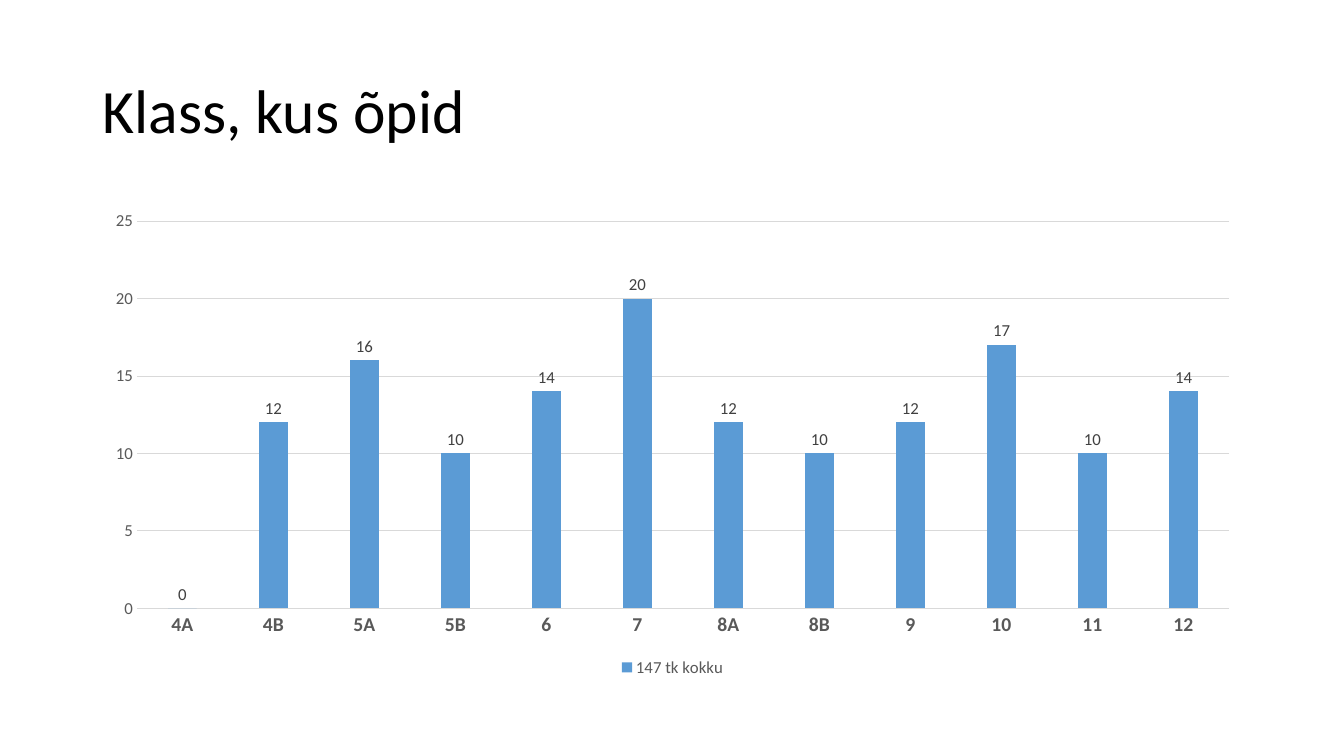
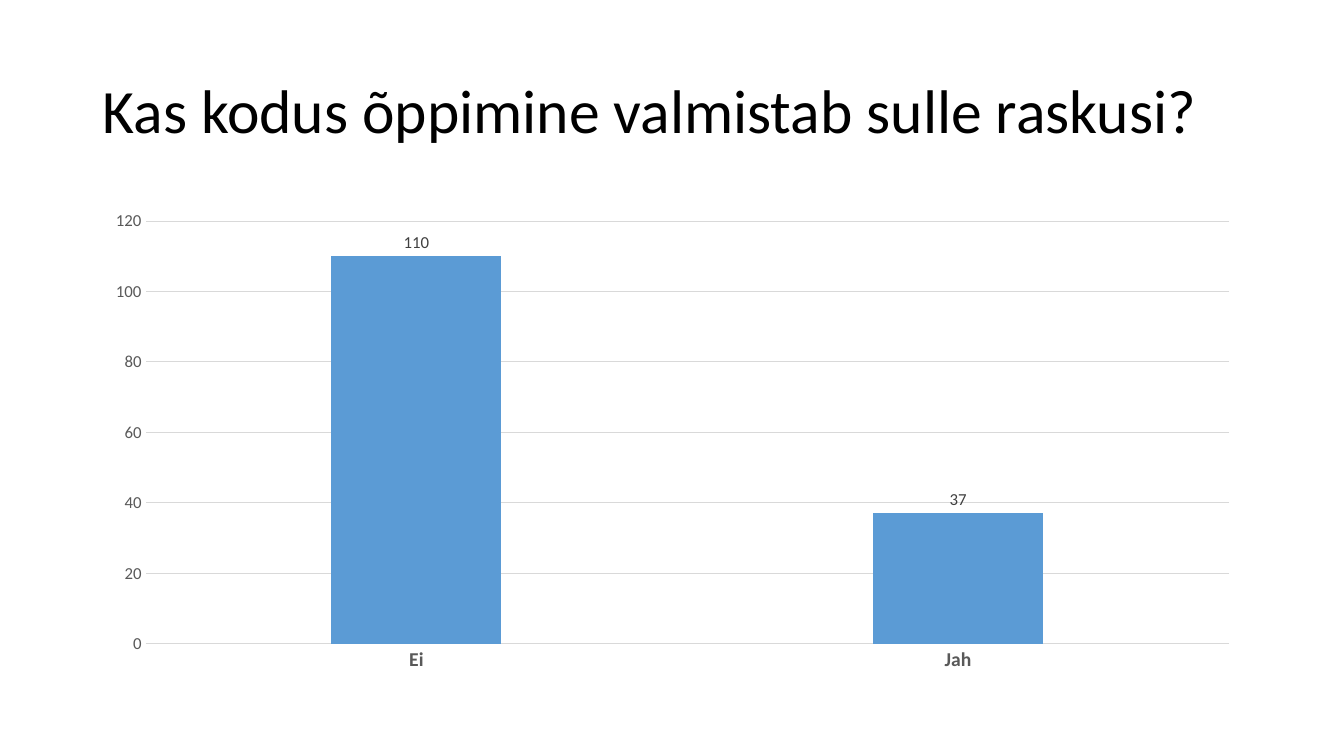
from pptx import Presentation
from pptx.chart.data import CategoryChartData
from pptx.dml.color import RGBColor
from pptx.enum.chart import (XL_CHART_TYPE, XL_LABEL_POSITION,
                             XL_LEGEND_POSITION, XL_TICK_MARK)
from pptx.enum.text import MSO_ANCHOR
from pptx.util import Inches, Pt

FONT = "Calibri"
BLACK, GREY, DARK, RULE, BLUE = "000000", "595959", "404040", "D9D9D9", "5B9BD5"
TITLE_BOX = (0.92, 0.4, 11.5, 1.45)
CHART_BOX = (0.92, 2, 11.5, 4.76)

SLIDES = [
    dict(title="Klass, kus õpid", name="147 tk kokku", legend=True,
         values={"4A": 0, "4B": 12, "5A": 16, "5B": 10, "6": 14, "7": 20,
                 "8A": 12, "8B": 10, "9": 12, "10": 17, "11": 10, "12": 14}),
    dict(title="Kas kodus õppimine valmistab sulle raskusi?", name="Series 1",
         legend=False, values={"Ei": 110, "Jah": 37}),
]


def rgb(color):
    return RGBColor.from_string(color)


def set_font(font, size, color, bold=False):
    font.name, font.size, font.bold = FONT, Pt(size), bold
    font.color.rgb = rgb(color)


def set_line(line, color=RULE, width=0.75):
    line.color.rgb = rgb(color)
    line.width = Pt(width)


def add_text(s, box, text, size=44, color=BLACK, bold=False,
             anchor=MSO_ANCHOR.MIDDLE, spacing=0.9):
    tf = s.shapes.add_textbox(*map(Inches, box)).text_frame
    tf.word_wrap = True
    tf.vertical_anchor = anchor
    p = tf.paragraphs[0]
    p.line_spacing = spacing
    r = p.add_run()
    r.text = text
    set_font(r.font, size, color, bold)


def style_axes(chart):
    cat, val = chart.category_axis, chart.value_axis
    for axis in (cat, val):
        axis.major_tick_mark = axis.minor_tick_mark = XL_TICK_MARK.NONE
    set_font(cat.tick_labels.font, 14, GREY, bold=True)
    set_font(val.tick_labels.font, 12, GREY)
    set_line(cat.format.line)
    val.format.line.fill.background()
    val.has_major_gridlines = True
    set_line(val.major_gridlines.format.line)


def style_columns(plot):
    plot.gap_width, plot.overlap = 219, -27
    plot.vary_by_categories = False
    fill = plot.series[0].format.fill
    fill.solid()
    fill.fore_color.rgb = rgb(BLUE)
    labels = plot.series[0].data_labels
    labels.show_value = True
    labels.position = XL_LABEL_POSITION.OUTSIDE_END
    set_font(labels.font, 12, DARK)


def add_columns(s, box, name, values, legend):
    data = CategoryChartData()
    data.categories = list(values)
    data.add_series(name, values.values())
    chart = s.shapes.add_chart(XL_CHART_TYPE.COLUMN_CLUSTERED,
                               *map(Inches, box), data).chart
    set_font(chart.font, 10, BLACK)
    chart.has_title = False
    chart.has_legend = legend
    if legend:
        chart.legend.position = XL_LEGEND_POSITION.BOTTOM
        chart.legend.include_in_layout = False
        set_font(chart.legend.font, 12, GREY)
    style_axes(chart)
    style_columns(chart.plots[0])


def add_chart_slide(prs, title, **chart):
    s = prs.slides.add_slide(prs.slide_layouts[6])
    add_text(s, TITLE_BOX, title)
    add_columns(s, CHART_BOX, **chart)


def main():
    prs = Presentation()
    prs.slide_width, prs.slide_height = Inches(13.33), Inches(7.5)
    for content in SLIDES:
        add_chart_slide(prs, **content)
    prs.save("out.pptx")


if __name__ == "__main__":
    main()
